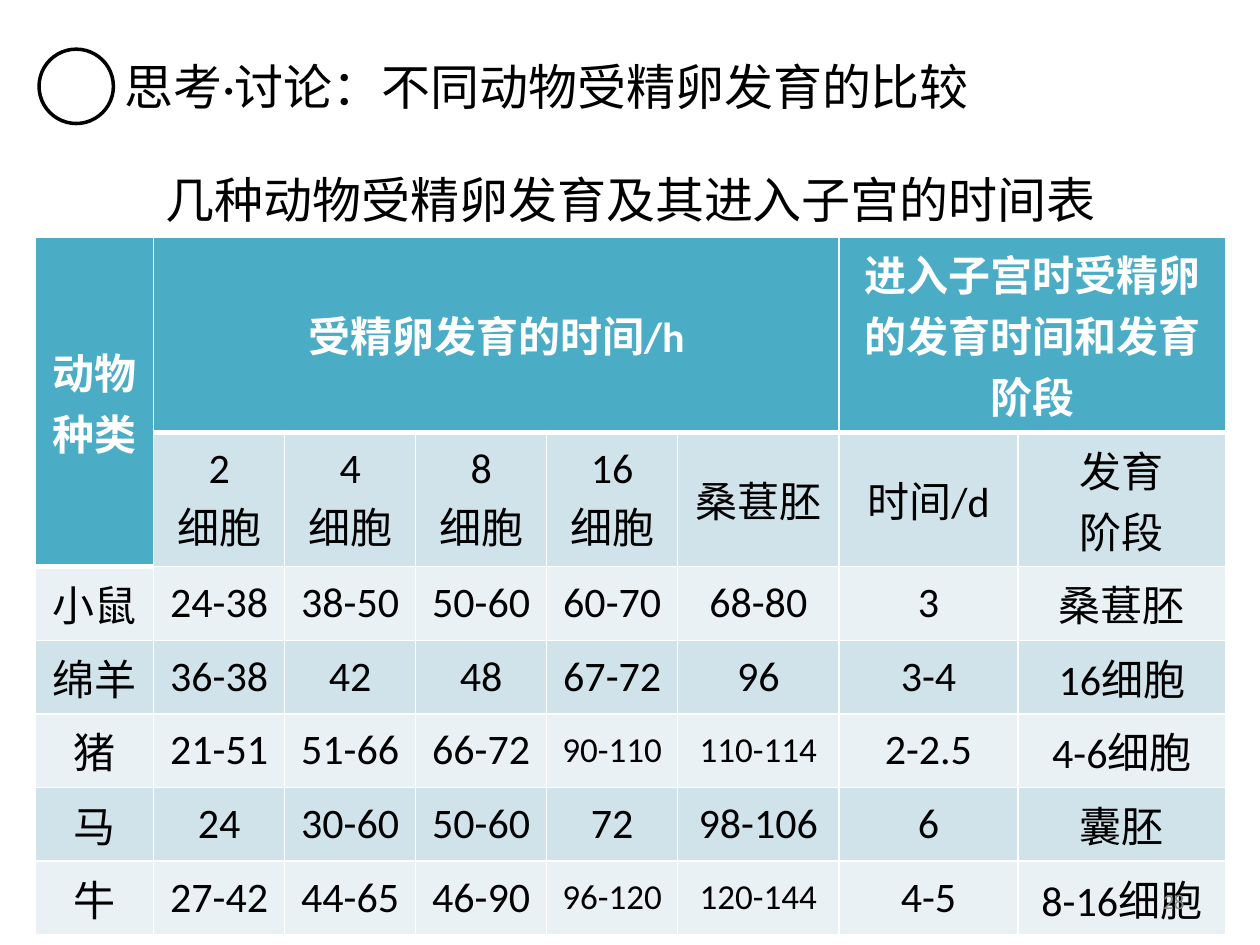
from lxml import etree
from pptx import Presentation
from pptx.dml.color import RGBColor
from pptx.enum.shapes import MSO_SHAPE
from pptx.enum.text import MSO_ANCHOR, MSO_AUTO_SIZE, PP_ALIGN
from pptx.oxml.ns import qn
from pptx.util import Inches, Pt

CENTER, LEFT, RIGHT = PP_ALIGN.CENTER, PP_ALIGN.LEFT, PP_ALIGN.RIGHT
MIDDLE, TOP = MSO_ANCHOR.MIDDLE, MSO_ANCHOR.TOP
BLACK = RGBColor(0x00, 0x00, 0x00)
WHITE = RGBColor(0xFF, 0xFF, 0xFF)
GRAY = RGBColor(0x8C, 0x8C, 0x8C)
TEAL = RGBColor(0x4B, 0xAC, 0xC6)
BANDS = (RGBColor(0xE9, 0xF1, 0xF5), RGBColor(0xD0, 0xE3, 0xEA))

MARGIN, CONTENT_WIDTH = 0.28, 9.45
COLUMN_WIDTHS = (0.94, 1.04, 1.04, 1.04, 1.04, 1.28, 1.42, 1.65)
ROW_HEIGHT = 0.41
HEADER_SPANS = (((0, 0), (1, 0)), ((0, 1), (0, 5)), ((0, 6), (0, 7)))
ROWS = (
    ("动物种类", "受精卵发育的时间/h", "", "", "", "",
     "进入子宫时受精卵的发育时间和发育阶段", ""),
    ("", "2\n细胞", "4\n细胞", "8\n细胞", "16\n细胞", "桑葚胚", "时间/d",
     "发育\n阶段"),
    ("小鼠", "24-38", "38-50", "50-60", "60-70", "68-80", "3", "桑葚胚"),
    ("绵羊", "36-38", "42", "48", "67-72", "96", "3-4", "16细胞"),
    ("猪", "21-51", "51-66", "66-72", "90-110", "110-114", "2-2.5", "4-6细胞"),
    ("马", "24", "30-60", "50-60", "72", "98-106", "6", "囊胚"),
    ("牛", "27-42", "44-65", "46-90", "96-120", "120-144", "4-5", "8-16细胞"),
)
SMALL_CELLS = {(row, column) for row in (4, 6) for column in (4, 5)}


def style_text(frame, size, color, align, bold=False):
    font_format = {"name": "Calibri", "size": Pt(size), "bold": bold}
    for para in frame.paragraphs:
        para.alignment = align
        for span in para.runs:
            for name, value in font_format.items():
                setattr(span.font, name, value)
            span.font.color.rgb = color


def set_borders(cell, bottom_width):
    """Draw white borders; call before the cell gets its fill."""
    properties = cell._tc.get_or_add_tcPr()
    widths = {"a:lnL": 1, "a:lnR": 1, "a:lnT": 1, "a:lnB": bottom_width}
    for tag, width in widths.items():
        line = etree.SubElement(properties, qn(tag), w=str(Pt(width)))
        fill = etree.SubElement(line, qn("a:solidFill"))
        etree.SubElement(fill, qn("a:srgbClr"), val=str(WHITE))


def add_heading(page, left, top, width, height):
    circle_size = 0.59
    circle = page.shapes.add_shape(
        MSO_SHAPE.OVAL, Inches(left + 0.03), Inches(top + 0.03),
        Inches(circle_size), Inches(circle_size))
    circle.shadow.inherit = False
    circle.fill.background()
    circle.line.color.rgb = BLACK
    circle.line.width = Pt(2)

    title = page.shapes.title
    title.left, title.top = Inches(left), Inches(top)
    title.width, title.height = Inches(width), Inches(height)
    frame = title.text_frame
    frame.text = "思考·讨论：不同动物受精卵发育的比较"
    frame.auto_size = MSO_AUTO_SIZE.NONE
    frame.vertical_anchor = MIDDLE
    frame.margin_left = Inches(circle_size + 0.12)
    style_text(frame, 28, BLACK, LEFT)


def add_label(page, left, top, width, height, text, size, color, align, anchor):
    box = page.shapes.add_textbox(
        Inches(left), Inches(top), Inches(width), Inches(height))
    frame = box.text_frame
    frame.word_wrap = True
    frame.vertical_anchor = anchor
    frame.text = text
    style_text(frame, size, color, align)
    return frame


def add_schedule(page, left, top, width):
    table = page.shapes.add_table(
        len(ROWS), len(COLUMN_WIDTHS), Inches(left), Inches(top),
        Inches(width), Inches(ROW_HEIGHT * len(ROWS))).table
    table.first_row = table.horz_banding = False
    for column, column_width in zip(table.columns, COLUMN_WIDTHS):
        column.width = Inches(column_width)
    for start, end in HEADER_SPANS:
        table.cell(*start).merge(table.cell(*end))

    for row, texts in enumerate(ROWS):
        for column, text in enumerate(texts):
            cell = table.cell(row, column)
            is_header = row == 0 or (row, column) == (1, 0)
            set_borders(cell, 3 if is_header else 1)
            cell.fill.solid()
            cell.fill.fore_color.rgb = TEAL if is_header else BANDS[row % 2]
            cell.vertical_anchor = MIDDLE
            if text:
                cell.text = text
                size = 20 if (row, column) in SMALL_CELLS else 24
                color = WHITE if is_header else BLACK
                style_text(cell.text_frame, size, color, CENTER, is_header)


def main():
    deck = Presentation()
    deck.slide_width, deck.slide_height = Inches(10), Inches(7.5)
    page = deck.slides.add_slide(deck.slide_layouts[5])
    add_heading(page, MARGIN, 0.36, CONTENT_WIDTH, 0.64)
    add_schedule(page, MARGIN, 1.88, CONTENT_WIDTH)
    add_label(page, 7.17, 6.95, 2.33, 0.4, "28", 12, GRAY, RIGHT, MIDDLE)
    caption = add_label(page, MARGIN, 1.06, CONTENT_WIDTH, 5.7,
                        "几种动物受精卵发育及其进入子宫的时间表",
                        28, BLACK, CENTER, TOP)
    caption.paragraphs[0].line_spacing = 1.5
    deck.save("out.pptx")


if __name__ == "__main__":
    main()
